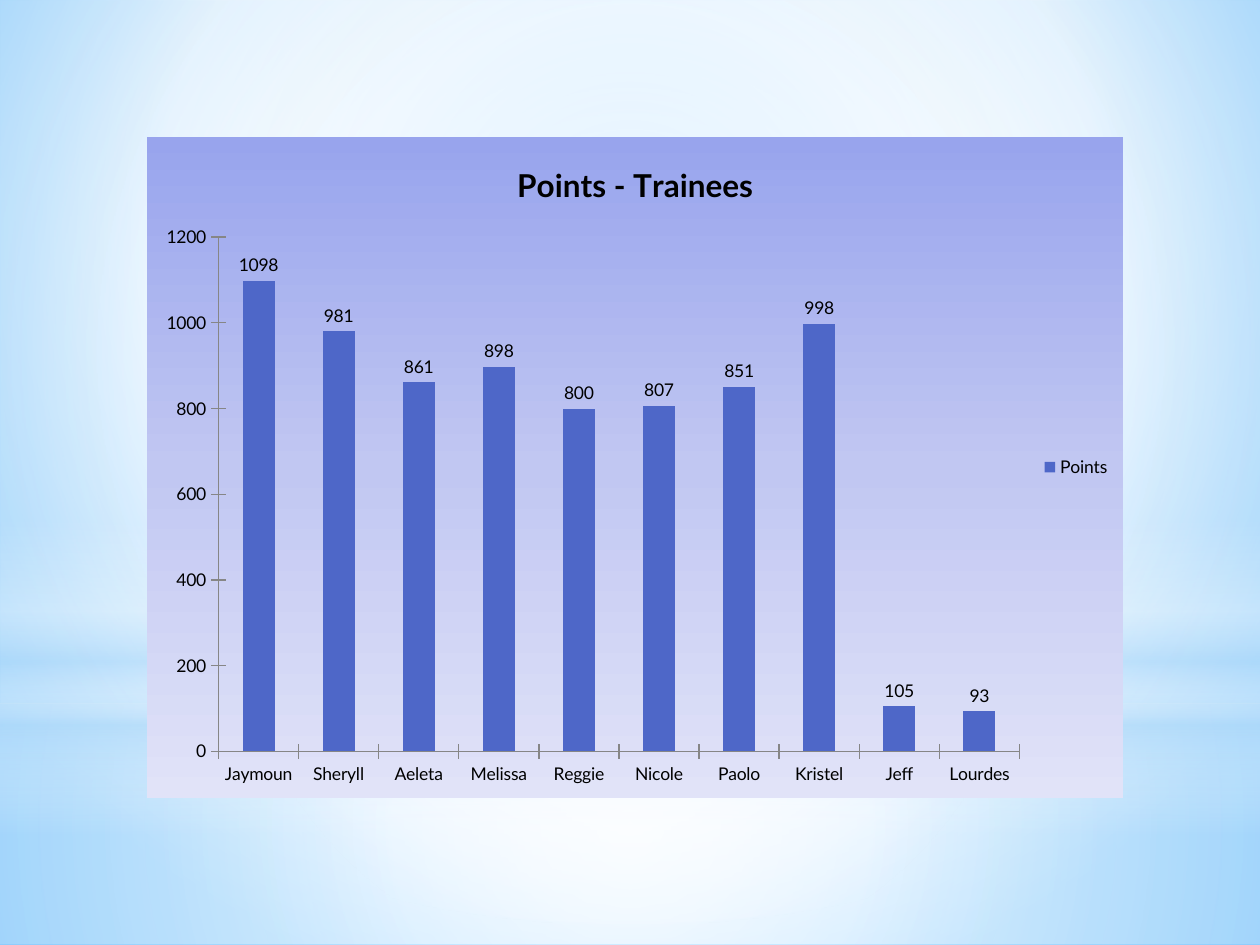
import pptx
import pptx.chart.data
import pptx.dml.color
import pptx.enum.chart
import pptx.enum.shapes
import pptx.oxml
import pptx.oxml.ns
import pptx.util

COLS, ROWS = 120, 90
WHITE, SKY = "FFFFFF", "B4DCFA"
MID = (50, 50, 50, 50)
POINTS = {
    "Jaymoun": 1098, "Sheryll": 981, "Aeleta": 861, "Melissa": 898,
    "Reggie": 800, "Nicole": 807, "Paolo": 851, "Kristel": 998,
    "Jeff": 105, "Lourdes": 93,
}


def color(text):
    """Turn a hex string into a colour."""
    return pptx.dml.color.RGBColor.from_string(text)


def blend(stops, focus=None):
    """Make a gradient from (place, hex, opacity) stops, round if it has a focus."""
    marks = "".join(
        f'<a:gs pos="{place * 1000}"><a:srgbClr val="{color(tint)}">'
        f'<a:alpha val="{alpha * 1000}"/></a:srgbClr></a:gs>'
        for place, tint, alpha in stops
    )
    if focus:
        sides = " ".join(f'{side}="{share * 1000}"' for side, share in zip("ltrb", focus))
        course = f'<a:path path="circle"><a:fillToRect {sides}/></a:path>'
    else:
        course = '<a:lin ang="5400000" scaled="0"/>'
    return pptx.oxml.parse_xml(
        f'<a:gradFill {pptx.oxml.ns.nsdecls("a")} rotWithShape="1">'
        f"<a:gsLst>{marks}</a:gsLst>{course}</a:gradFill>"
    )


class Deck:
    """Holds the style and the current slide."""

    font, ink, rule, bar = "Lato", "000000", "868686", "4E67C8"

    def __init__(self):
        """Start a deck with one blank slide."""
        self.show = pptx.Presentation()
        self.show.slide_width = pptx.util.Inches(10)
        self.show.slide_height = pptx.util.Inches(7.5)
        self.slide = self.show.slides.add_slide(self.show.slide_layouts[6])

    def place(self, left, top, width, height):
        """Turn grid columns and rows into lengths."""
        col, row = self.show.slide_width / COLS, self.show.slide_height / ROWS
        return [int(n) for n in (left * col, top * row, width * col, height * row)]

    def paint(self, owner, fill, stops, focus):
        """Give an element a gradient in place of its solid fill."""
        fill.solid()
        solid = next(owner.iter(pptx.oxml.ns.qn("a:solidFill")))
        solid.getparent().replace(solid, blend(stops, focus))

    def back(self, stops, focus):
        """Paint the slide background."""
        self.paint(self.slide.element, self.slide.background.fill, stops, focus)

    def glow(self, kind, box, stops, focus=None):
        """Add a borderless shape with a gradient."""
        shape = self.slide.shapes.add_shape(kind, *self.place(*box))
        shape.shadow.inherit = False
        shape.line.fill.background()
        self.paint(shape.element, shape.fill, stops, focus)

    def style(self, font, size, bold=False):
        """Set a font in the deck's style."""
        font.name, font.size, font.bold = self.font, pptx.util.Pt(size), bold
        font.color.rgb = color(self.ink)

    def chart(self, box, title, name, values, stops):
        """Add a column chart with a legend, value labels and a gradient."""
        enum = pptx.enum.chart
        data = pptx.chart.data.CategoryChartData()
        data.categories = list(values)
        data.add_series(name, list(values.values()))
        chart = self.slide.shapes.add_chart(
            enum.XL_CHART_TYPE.COLUMN_CLUSTERED, *self.place(*box), data
        ).chart
        self.style(chart.font, 10)
        chart.has_title = True
        head = chart.chart_title.text_frame
        head.text = title
        self.style(head.paragraphs[0].font, 18, True)
        chart.has_legend = True
        chart.legend.position = enum.XL_LEGEND_POSITION.RIGHT
        chart.legend.include_in_layout = False
        for axis in (chart.category_axis, chart.value_axis):
            axis.has_major_gridlines = False
            axis.major_tick_mark = enum.XL_TICK_MARK.CROSS
            axis.format.line.color.rgb = color(self.rule)
            axis.format.line.width = pptx.util.Pt(0.75)
        plot = chart.plots[0]
        plot.gap_width, plot.vary_by_categories = 150, False
        bars = plot.series[0]
        bars.format.fill.solid()
        bars.format.fill.fore_color.rgb = color(self.bar)
        labels = bars.data_labels
        labels.show_value = True
        labels.position = enum.XL_LABEL_POSITION.OUTSIDE_END
        self.style(labels.font, 10)
        panel = pptx.oxml.parse_xml(
            f'<c:spPr {pptx.oxml.ns.nsdecls("c", "a")}><a:ln><a:noFill/></a:ln></c:spPr>'
        )
        panel.insert(0, blend(stops))
        chart.element.find(pptx.oxml.ns.qn("c:chart")).addnext(panel)


def main():
    """Build and save the slide."""
    deck = Deck()
    kind = pptx.enum.shapes.MSO_SHAPE
    deck.back([(0, "9ED5FF", 100), (60, WHITE, 100), (100, "5BB9FF", 100)], (20, 10, 20, 60))
    deck.glow(kind.RECTANGLE, (0, 67, COLS, 23),
              [(0, WHITE, 91), (37, WHITE, 76), (100, SKY, 79)], MID)
    deck.glow(kind.RECTANGLE, (0, 0, COLS, 67),
              [(0, WHITE, 89), (48, WHITE, 62), (100, SKY, 79)], MID)
    deck.glow(kind.RECTANGLE, (0, 49.5, COLS, 30),
              [(0, WHITE, 0), (29, WHITE, 30), (45, SKY, 40),
               (55, WHITE, 26), (65, SKY, 60), (100, WHITE, 0)])
    deck.glow(kind.OVAL, (0, 21, COLS, 67), [(0, WHITE, 100), (56, WHITE, 0)], MID)
    deck.chart((14, 13, 93, 63), "Points - Trainees", "Points", POINTS,
               [(0, "98A4ED", 100), (50, "C1C7F2", 100), (100, "E1E3F8", 100)])
    deck.show.save("out.pptx")


if __name__ == "__main__":
    main()
